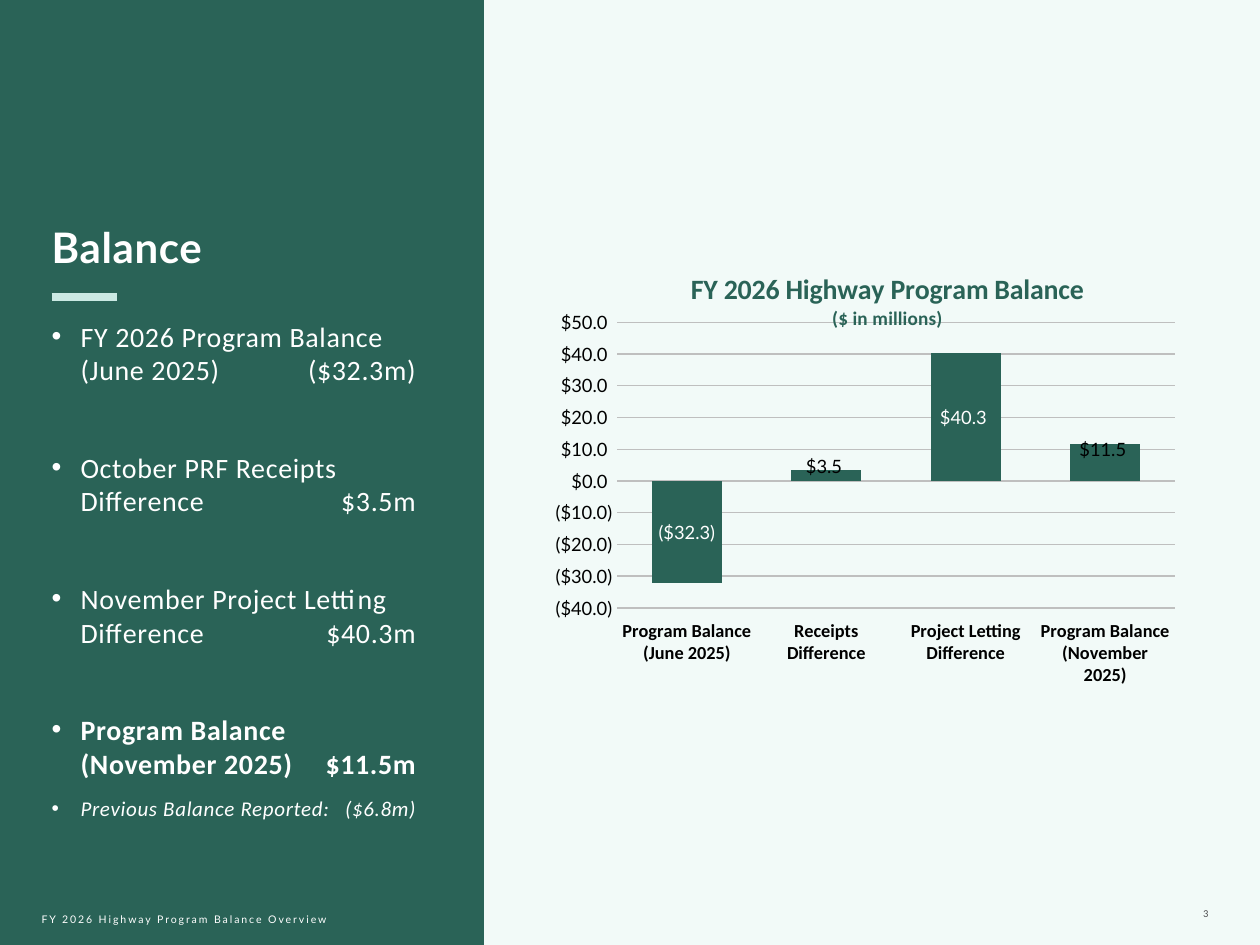
from lxml import etree
from pptx import Presentation
from pptx.chart.data import CategoryChartData
from pptx.dml.color import RGBColor
from pptx.enum.chart import XL_CHART_TYPE, XL_LABEL_POSITION, XL_TICK_LABEL_POSITION, XL_TICK_MARK
from pptx.enum.shapes import MSO_CONNECTOR, MSO_SHAPE
from pptx.enum.text import MSO_ANCHOR, PP_ALIGN
from pptx.oxml import parse_xml
from pptx.oxml.ns import nsdecls, qn
from pptx.util import Inches, Pt

COLUMN = XL_CHART_TYPE.COLUMN_CLUSTERED
CENTER = XL_LABEL_POSITION.CENTER
LOW = XL_TICK_LABEL_POSITION.LOW
NO_TICK = XL_TICK_MARK.NONE
RIGHT = PP_ALIGN.RIGHT

GREEN = RGBColor(0x2A, 0x63, 0x57)
MINT = RGBColor(0xCB, 0xE9, 0xE3)
PALE = RGBColor(0xF2, 0xFA, 0xF8)
GRAY = RGBColor(0xBF, 0xBF, 0xBF)
DARK = RGBColor(0x4D, 0x4D, 0x4F)
BLACK = RGBColor(0, 0, 0)
WHITE = RGBColor(0xFF, 0xFF, 0xFF)
MONEY = '"$"#,##0.0_);\\("$"#,##0.0\\)'


def style(font, size, color, name, bold=False, italic=False):
    font.size, font.name = Pt(size), name
    font.bold, font.italic = bold, italic
    font.color.rgb = color


def add_text_box(left, top, width, height, anchor, inset):
    frame = page.shapes.add_textbox(Inches(left), Inches(top), Inches(width), Inches(height)).text_frame
    frame.word_wrap = True
    frame.vertical_anchor = anchor
    frame.margin_left = frame.margin_right = 0
    frame.margin_top = frame.margin_bottom = Inches(inset)
    return frame


deck = Presentation()
deck.slide_width, deck.slide_height = Inches(10), Inches(7.5)
page = deck.slides.add_slide(deck.slide_layouts[6])
page.background.fill.solid()
page.background.fill.fore_color.rgb = PALE

# Green side panel
panel = page.shapes.add_shape(MSO_SHAPE.RECTANGLE, 0, 0, Inches(3.84), Inches(7.5))
panel.shadow.inherit = False
panel.fill.solid()
panel.fill.fore_color.rgb = GREEN
panel.line.fill.background()

# Slide number and footer
for text, place, anchor, align, font_name, color in [
    ("3", (8.62, 6.95, 0.97, 0.4), MSO_ANCHOR.BOTTOM, RIGHT, "Calibri", DARK),
    ("FY 2026 Highway Program Balance Overview", (0.33, 7.15, 3, 0.3), MSO_ANCHOR.MIDDLE,
     PP_ALIGN.LEFT, "Lato", WHITE),
]:
    para = add_text_box(*place, anchor, 0.05).paragraphs[0]
    span = para.add_run()
    span.text = text
    para.alignment = align
    style(para.font, 6, color, font_name)
    span.font._element.set("spc", "110")

# Balance chart
data = CategoryChartData(number_format=MONEY)
data.categories = ["Program Balance (June 2025)", "Receipts Difference",
                   "Project Letting Difference", "Program Balance (November 2025)"]
data.add_series("Series 1", [-32.3, 3.5, 40.3, 11.5])
chart = page.shapes.add_chart(COLUMN, Inches(4.41), Inches(2.05), Inches(4.92), Inches(3.5), data).chart
chart.has_legend = False
style(chart.font, 10, BLACK, "Lato")

title = chart.chart_title.text_frame
title.text = "FY 2026 Highway Program Balance"
title.add_paragraph().text = "($ in millions)"
for para, size in zip(title.paragraphs, (16, 11)):
    style(para.font, size, GREEN, "Calibri", bold=True)
chart.chart_title.include_in_layout = False

for axis, font_name, bold in [(chart.category_axis, "Calibri", True), (chart.value_axis, "Lato", False)]:
    axis.major_tick_mark = axis.minor_tick_mark = NO_TICK
    style(axis.tick_labels.font, 10.5, BLACK, font_name, bold)
chart.category_axis.tick_label_position = LOW
chart.value_axis.minimum_scale, chart.value_axis.maximum_scale = -40, 50
chart.value_axis.major_unit = 10
chart.value_axis.tick_labels.number_format = MONEY
chart.value_axis.tick_labels.number_format_is_linked = False
chart.value_axis.format.line.fill.background()
for line in (chart.category_axis.format.line, chart.value_axis.major_gridlines.format.line):
    line.color.rgb = GRAY
    line.width = Pt(0.75)

plot = chart.plots[0]
plot.gap_width, plot.overlap = 100, -24
plot.vary_by_categories = False
bars = plot.series[0]
bars.invert_if_negative = False
bars.format.fill.solid()
bars.format.fill.fore_color.rgb = GREEN
labels = bars.data_labels
labels.show_value = True
labels.number_format, labels.number_format_is_linked = MONEY, False
labels.position = CENTER
style(labels.font, 10.5, BLACK, "Lato")
for index, color in enumerate((WHITE, BLACK, WHITE, BLACK)):
    label = bars.points[index].data_label
    style(label.font, 10.5, color, "Lato")
    label.position = CENTER

# Manual placement of the plot, the title and the two raised labels
space = chart._chartSpace
label_nodes = space.xpath(".//c:dLbl")
plot_area = space.xpath(".//c:plotArea")[0]
title_node = space.xpath("./c:chart/c:title")[0]
for node, position, sides in [
    (plot_area, 0, {"layoutTarget": "inner", "xMode": "edge", "yMode": "edge",
                    "x": 0.1, "y": 0.15, "w": 0.9, "h": 0.65}
     | {"x": 0.097, "y": 0.145, "w": 0.903, "h": 0.648}),
    (title_node, 1, {"xMode": "edge", "yMode": "edge", "x": 0.21, "y": 0.02}),
    (label_nodes[1], 1, {"x": 0, "y": -0.02}),
    (label_nodes[3], 1, {"x": 0, "y": -0.03}),
]:
    for old in node.findall(qn("c:layout")):
        node.remove(old)
    layout = parse_xml(f"<c:layout {nsdecls('c')}><c:manualLayout/></c:layout>")
    for key, value in sides.items():
        etree.SubElement(layout[0], qn(f"c:{key}")).set("val", str(value))
    node.insert(position, layout)

# Heading and balance list, with amounts on a right tab
body = add_text_box(0.41, 1.76, 3.12, 4.83, MSO_ANCHOR.TOP, 0)
heading = body.paragraphs[0]
heading.text = "Balance"
heading.space_after = Pt(18)
style(heading.font, 24, WHITE, "Lato", bold=True)
for text, gap, size, bold, italic in [
    ("FY 2026 Program Balance\v(June 2025)\t($32.3m)", 9, 16, False, False),
    ("October PRF Receipts\vDifference\t$3.5m", 36.5, 16, False, False),
    ("November Project Letting\vDifference\t$40.3m", 36.5, 16, False, False),
    ("Program Balance\v(November 2025)\t$11.5m", 36.5, 16, True, False),
    ("Previous Balance Reported:\t($6.8m)", 9, 12, False, True),
]:
    para = body.add_paragraph()
    para.text = text
    para.space_before = Pt(gap)
    props = para._p.get_or_add_pPr()
    props.set("marL", str(Inches(0.23)))
    props.set("indent", str(-Inches(0.23)))
    etree.SubElement(props, qn("a:buFont")).set("typeface", "Arial")
    etree.SubElement(props, qn("a:buChar")).set("char", "•")
    tab = etree.SubElement(etree.SubElement(props, qn("a:tabLst")), qn("a:tab"))
    tab.set("pos", str(Inches(2.93)))
    tab.set("algn", "r")
    style(para.font, size, WHITE, "Calibri", bold, italic)
for para in body.paragraphs:
    for span in para.runs:
        span.font._element.set("spc", "40")

# Accent rule under the heading
rule = page.shapes.add_connector(MSO_CONNECTOR.STRAIGHT, Inches(0.41), Inches(2.36), Inches(0.93), Inches(2.36))
rule.line.color.rgb = MINT
rule.line.width = Pt(4.5)
etree.SubElement(rule._element.spPr, qn("a:effectLst"))

deck.save("out.pptx")
